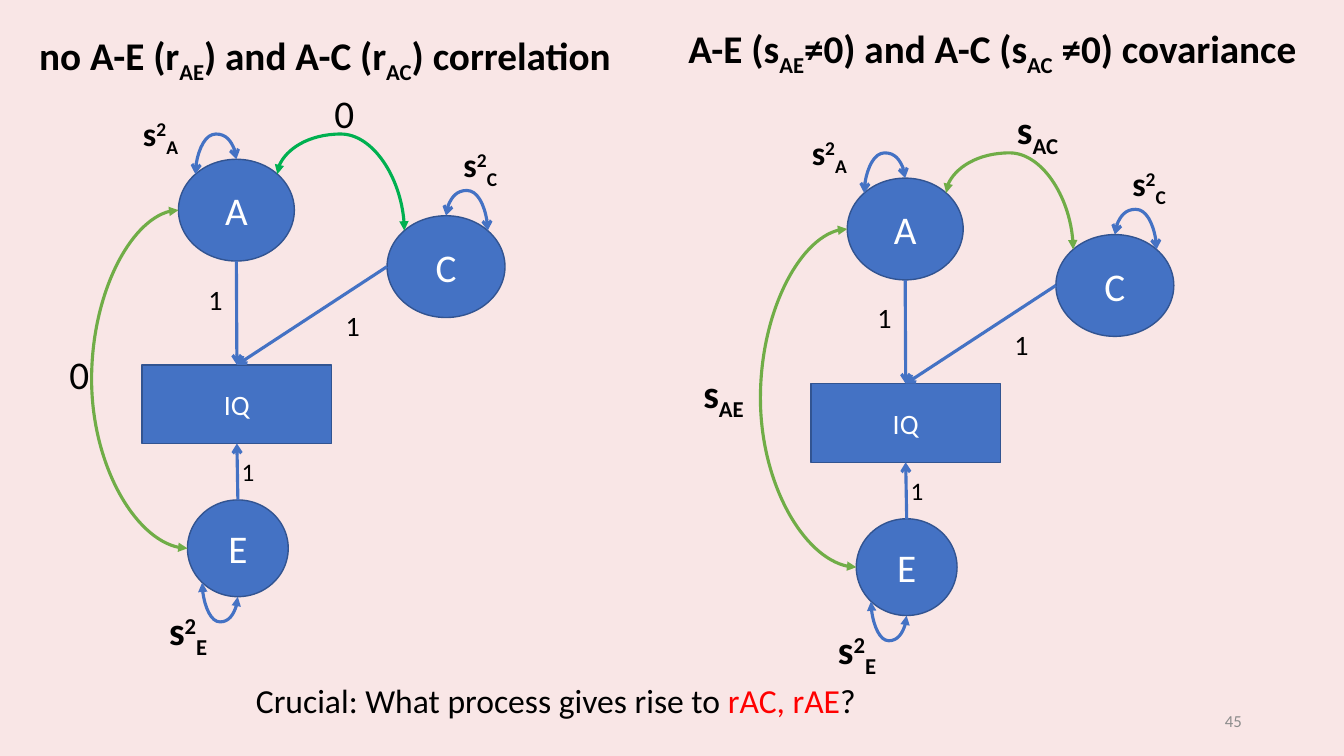
import math
import pptx
import pptx.dml.color
import pptx.enum.shapes
import pptx.enum.text
import pptx.oxml
import pptx.oxml.ns
import pptx.util

CELL = 0.1  # grid unit in inches: columns and rows are counted in cells
BLUE, EDGE, GREEN, LEAF = "4472C4", "325491", "00B050", "70AD47"
BLACK, WHITE, RED, GREY, ROSE = "000000", "FFFFFF", "FF0000", "8C8C8C", "F9E6E6"
KIND = pptx.enum.shapes.MSO_SHAPE
LINK = pptx.enum.shapes.MSO_CONNECTOR
ALIGN = pptx.enum.text.PP_ALIGN
MID = pptx.enum.text.MSO_ANCHOR.MIDDLE
RAISE, LOWER = 30, -25


def grid(*cells):
    return [pptx.util.Inches(n * CELL) for n in cells]


def paint(color, tone):
    color.rgb = pptx.dml.color.RGBColor.from_string(tone)


def add(node, tag, **attrs):
    child = pptx.oxml.parse_xml(f"<a:{tag} {pptx.oxml.ns.nsdecls('a')}/>")
    for key, val in attrs.items():
        child.set(key, str(val))
    node.append(child)


def write(para, parts, size, tone=BLACK, bold=False):
    """Each part is (text, baseline shift) or (text, baseline shift, tone)."""
    for text, shift, *own in parts:
        run = para.add_run()
        run.text = text
        run.font.name = "Calibri"
        run.font.size = pptx.util.Pt(size)
        run.font.bold = bold
        paint(run.font.color, own[0] if own else tone)
        if shift:
            run.font._element.set("baseline", str(shift * 1000))


def label(shapes, box, parts, size, tone=BLACK, bold=False, wrap=False):
    frame = shapes.add_textbox(*grid(*box)).text_frame
    frame.word_wrap = wrap
    frame.auto_size = pptx.enum.text.MSO_AUTO_SIZE.SHAPE_TO_FIT_TEXT
    write(frame.paragraphs[0], parts, size, tone, bold)
    return frame


def node(shapes, kind, box, name, size):
    shape = shapes.add_shape(kind, *grid(*box))
    shape.shadow.inherit = False
    shape.fill.solid()
    paint(shape.fill.fore_color, BLUE)
    paint(shape.line.color, EDGE)
    shape.line.width = pptx.util.Pt(1)
    frame = shape.text_frame
    frame.vertical_anchor = MID
    frame.paragraphs[0].alignment = ALIGN.CENTER
    write(frame.paragraphs[0], [(name, 0)], size, WHITE)


def wire(shapes, kind, ends, tone, tips):
    link = shapes.add_connector(kind, *grid(*ends))
    paint(link.line.color, tone)
    link.line.width = pptx.util.Pt(2.25)
    head, tail = tips
    edge = link.line._get_or_add_ln()
    if head:
        add(edge, "headEnd", type=head)
    add(edge, "tailEnd", type=tail)
    add(link._element.spPr, "effectLst")
    return link


def arrow(shapes, start, end):
    wire(shapes, LINK.STRAIGHT, (*start, *end), BLUE, (None, "arrow"))


def arch(shapes, start, end, peak, turn, tone=BLUE, tip="triangle"):
    """Curve that leaves start towards turn (90 down, 180 left, 270 up) as far as peak."""
    (x1, y1), (x2, y2) = start, end
    dx, dy = x2 - x1, y2 - y1
    cx, cy = (x1 + x2) / 2, (y1 + y2) / 2
    du, dv = {90: (dy, -dx), 180: (-dx, -dy), 270: (-dy, dx)}[turn]
    ratio = (peak - x1) / dx if turn == 180 else (peak - y1) / dy
    ends = (cx - du / 2, cy - dv / 2, cx + du / 2, cy + dv / 2)
    link = wire(shapes, LINK.CURVE, ends, tone, (tip, tip))
    props = link._element.spPr
    props.xfrm.set("rot", str(turn * 60000))
    geom = props.find(pptx.oxml.ns.qn("a:prstGeom"))
    add(geom.get_or_add_avLst(), "gd", name="adj1", fmla=f"val {round(ratio * 100000)}")


def rim(box, angle):
    """Point on an oval, clockwise from the right."""
    x, y, w, h = box
    rad = math.radians(angle)
    return x + w / 2 * (1 + math.cos(rad)), y + h / 2 * (1 + math.sin(rad))


def model(slide, dx, dy, hue, cross, side):
    """Path diagram shifted by dx, dy; cross and side are (box, parts, bold)."""
    shapes = slide.shapes.add_group_shape().shapes

    def at(x, y, w, h):
        return x + dx, y + dy, w, h

    a, c, e = at(17.7, 15.8, 11.5, 10.1), at(38.4, 21.4, 11.7, 10.1), at(18.6, 49.6, 10, 9.6)
    iq = at(14.1, 36.2, 18.8, 7.8)
    top = (iq[0] + iq[2] / 2, iq[1])
    base = (top[0], iq[1] + iq[3])

    # Variables
    for name, box in (("A", a), ("C", c), ("E", e)):
        node(shapes, KIND.OVAL, box, name, 28)
    node(shapes, KIND.RECTANGLE, iq, "IQ", 20)

    # Paths to the phenotype
    arrow(shapes, rim(a, 90), top)
    arrow(shapes, rim(c, 180), top)
    arrow(shapes, rim(e, 270), base)
    for x, y, size in ((19.7, 27.5, 20), (33.3, 30.1, 20), (23, 44.8, 18)):
        label(shapes, at(x, y, 4.6, size * 0.22), [("1", 0)], size, wrap=True)

    # Variances
    arch(shapes, rim(a, 270), rim(a, 225), 13.3 + dy, 270, tip="arrow")
    arch(shapes, rim(c, 315), rim(c, 270), 18.9 + dy, 270, tip="arrow")
    arch(shapes, rim(e, 90), rim(e, 135), 61.7 + dy, 90)
    for name, box, size in (("A", (13.2, 10.7, 8.9, 5), 24), ("C", (45, 13.8, 5.7, 5), 24),
                            ("E", (15.8, 59.7, 7.7, 5.7), 28)):
        parts = [("s", 0), ("2", RAISE), (name, LOWER)]
        label(shapes, at(*box), parts, size, bold=True, wrap=True)

    # Covariances
    arch(shapes, rim(a, 315), rim(c, 225), 13.3 + dy, 270, hue)
    arch(shapes, rim(a, 180), rim(e, 180), 9.1 + dx, 180, LEAF)
    for box, parts, bold in (cross, side):
        label(shapes, box, parts, 28, bold=bold)


def main():
    deck = pptx.Presentation()
    deck.slide_width, deck.slide_height = grid(133.33, 75)
    slide = deck.slides.add_slide(deck.slide_layouts[6])
    slide.background.fill.solid()
    paint(slide.background.fill.fore_color, ROSE)

    # Path models
    zero = [("0", 0)]
    model(slide, 0, 0, GREEN, ((32.2, 8.4, 4, 5.7), zero, False),
          ((5.9, 34.3, 4, 5.7), zero, False))
    model(slide, 66.35, 1.87, LEAF,
          ((99.9, 10, 6.5, 5.7), [("s", 0), ("AC", LOWER)], True),
          ((68.8, 36.1, 6.4, 5.7), [("s", 0), ("AE", LOWER)], True))

    # Headings
    label(slide.shapes, (2.9, 2.6, 60.3, 5.7),
          [("no A-E (r", 0), ("AE", LOWER), (") and A-C (r", 0), ("AC", LOWER),
           (") correlation", 0)], 28, bold=True)
    label(slide.shapes, (67.3, 1.9, 64, 5.7),
          [("A-E (s", 0), ("AE", LOWER), ("≠0) and A-C (s", 0), ("AC", LOWER),
           (" ≠0) covariance", 0)], 28, bold=True)

    # Question and slide number
    label(slide.shapes, (24.4, 67, 62, 5),
          [("Crucial: What process gives rise to ", 0), ("rAC, rAE", 0, RED), ("?", 0)], 24)
    page = label(slide.shapes, (94.2, 69.5, 30, 4), [("45", 0)], 12, GREY, wrap=True)
    page.auto_size = pptx.enum.text.MSO_AUTO_SIZE.NONE
    page.vertical_anchor = MID
    page.paragraphs[0].alignment = ALIGN.RIGHT

    deck.save("out.pptx")


if __name__ == "__main__":
    main()
